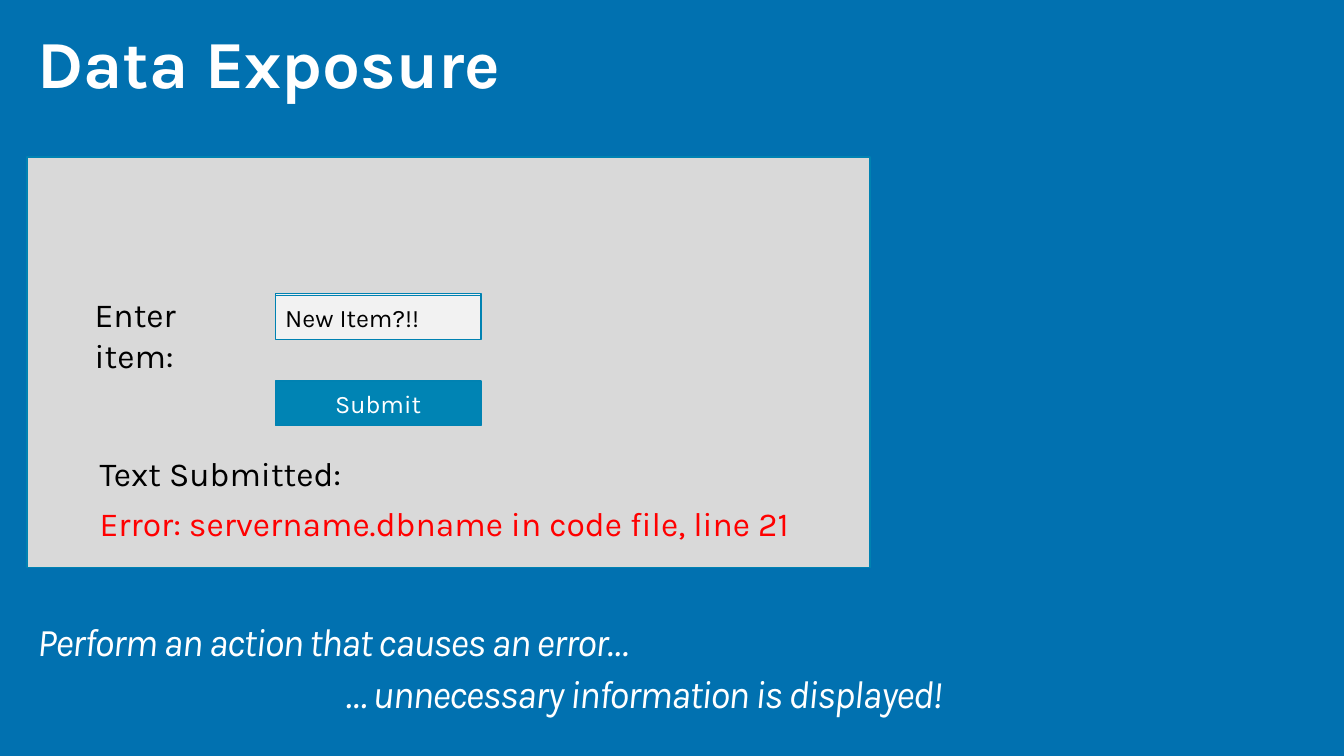
from pptx import Presentation
from pptx.dml.color import RGBColor
from pptx.enum.shapes import MSO_SHAPE
from pptx.enum.text import MSO_ANCHOR, PP_ALIGN
from pptx.util import Inches, Pt

BLUE = RGBColor(0x01, 0x71, 0xB0)
BORDER = RGBColor(0x00, 0x82, 0xB2)
BUTTON = RGBColor(0x00, 0x84, 0xB4)
PANEL = RGBColor(0xD9, 0xD9, 0xD9)
FIELD = RGBColor(0xF2, 0xF2, 0xF2)
WHITE = RGBColor(0xFF, 0xFF, 0xFF)
BLACK = RGBColor(0x00, 0x00, 0x00)
RED = RGBColor(0xFF, 0x00, 0x00)


def write(holder, text, size, color, anchor=MSO_ANCHOR.TOP, align=PP_ALIGN.LEFT):
    """Put one styled line of text in a shape and return its paragraph."""
    frame = holder.text_frame
    frame.word_wrap = True
    frame.vertical_anchor = anchor
    line = frame.paragraphs[0]
    line.text = text
    line.alignment = align
    line.font.name = "Karla"
    line.font.size = Pt(size)
    line.font.color.rgb = color
    return line


def add_box(left, top, width, height, fill):
    box = slide.shapes.add_shape(
        MSO_SHAPE.RECTANGLE, Inches(left), Inches(top), Inches(width), Inches(height))
    box.shadow.inherit = False
    box.fill.solid()
    box.fill.fore_color.rgb = fill
    box.line.color.rgb = BORDER
    box.line.width = Pt(1)
    return box


prs = Presentation()
prs.slide_width, prs.slide_height = Inches(13.33), Inches(7.5)
slide = prs.slides.add_slide(prs.slide_layouts[6])
slide.background.fill.solid()
slide.background.fill.fore_color.rgb = BLUE

title_box = slide.shapes.add_textbox(Inches(0.27), Inches(0.25), Inches(12.77), Inches(0.82))
title = write(title_box, "Data Exposure", 48, WHITE, MSO_ANCHOR.MIDDLE)
title.font.bold = True
title.line_spacing = 0.9

# Web form
add_box(0.27, 1.56, 8.36, 4.07, PANEL)
for text, left, top, width, color in [
    ("Enter item:", 0.84, 2.87, 1.79, BLACK),
    ("Text Submitted:", 0.89, 4.44, 3.88, BLACK),
    ("Error: servername.dbname in code file, line 21", 0.89, 4.94, 7.44, RED),
]:
    label = slide.shapes.add_textbox(Inches(left), Inches(top), Inches(width), Inches(0.5))
    write(label, text, 24, color)

add_box(2.73, 2.91, 2.04, 0.44, FIELD)
filled_field = add_box(2.73, 2.93, 2.04, 0.44, FIELD)
write(filled_field, "New Item?!!", 18, BLACK, MSO_ANCHOR.MIDDLE)
submit = add_box(2.73, 3.78, 2.04, 0.44, BUTTON)
write(submit, "Submit", 18, WHITE, MSO_ANCHOR.MIDDLE, PP_ALIGN.CENTER)

# Explanation below the form
for text, left, top in [
    ("Perform an action that causes an error…", 0.27, 6.13),
    ("… unnecessary information is displayed!", 3.33, 6.64),
]:
    remark_box = slide.shapes.add_textbox(Inches(left), Inches(top), Inches(8.36), Inches(0.56))
    remark = write(remark_box, text, 28, WHITE)
    remark.font.italic = True
    remark.line_spacing = 0.9
    remark.runs[0].font._element.set("spc", "-100")

prs.save("out.pptx")
